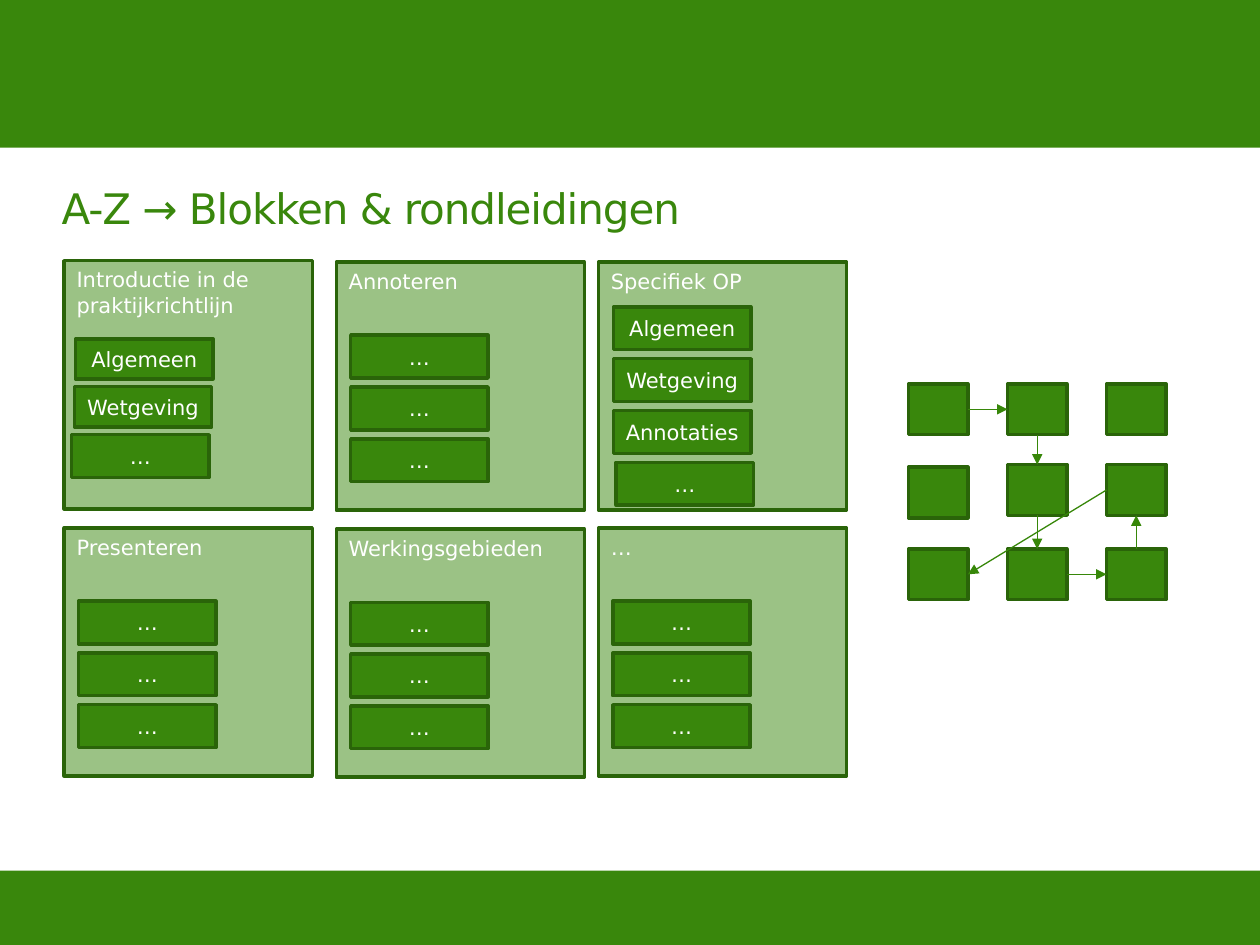
import pptx
import pptx.dml.color
import pptx.enum.shapes
import pptx.enum.text
import pptx.oxml
import pptx.oxml.ns
import pptx.util
from lxml import etree

Pt = pptx.util.Pt
RGBColor = pptx.dml.color.RGBColor
RECTANGLE = pptx.enum.shapes.MSO_SHAPE.RECTANGLE
STRAIGHT = pptx.enum.shapes.MSO_CONNECTOR.STRAIGHT
ANCHOR = pptx.enum.text.MSO_ANCHOR
ALIGN = pptx.enum.text.PP_ALIGN
qn = pptx.oxml.ns.qn

GREEN = RGBColor(0x39, 0x87, 0x0C)
DARK_GREEN = RGBColor(0x2A, 0x64, 0x09)
ARROW_GREEN = RGBColor(0x37, 0x87, 0x09)
WHITE = RGBColor(0xFF, 0xFF, 0xFF)

FONT = "DejaVu Sans"
SLIDE_WIDTH, SLIDE_HEIGHT = 720, 540
PANEL_SIZE = 141.8
CHIP_WIDTH = 78.5
TOP, RIGHT, BOTTOM, LEFT = 0, 3, 2, 1

PANEL_FRAME = {"margin_left": Pt(7.2), "margin_right": Pt(7.2),
               "margin_top": Pt(3.6), "margin_bottom": Pt(3.6),
               "vertical_anchor": ANCHOR.TOP, "word_wrap": True}
CHIP_FRAME = {**PANEL_FRAME, "margin_left": Pt(3), "margin_right": Pt(3),
              "vertical_anchor": ANCHOR.MIDDLE}
TITLE_FRAME = {**PANEL_FRAME, "margin_top": Pt(5)}
LABEL_FONT = {"size": Pt(12), "name": FONT}
TITLE_FONT = {"size": Pt(24), "name": FONT}

DOTS = ["…"] * 3
STANDARD = {"labels": DOTS, "first": 41.8, "step": 29.6,
            "insets": [8.2] * 3, "heights": [24.5] * 3}
PANELS = [
    {**STANDARD, "at": (36.7, 149), "heading": "Introductie in de praktijkrichtlijn",
     "labels": ["Algemeen", "Wetgeving", "…"], "first": 44.6, "step": 27.4,
     "insets": [6.5, 5.8, 4.3], "heights": [23, 23, 24.5]},
    {**STANDARD, "at": (192.2, 149.8), "heading": "Annoteren"},
    {**STANDARD, "at": (36.7, 301.7), "heading": "Presenteren"},
    {**STANDARD, "at": (192.2, 302.4), "heading": "Werkingsgebieden"},
    {**STANDARD, "at": (342, 301.7), "heading": "…"},
    {**STANDARD, "at": (342, 149.8), "heading": "Specifiek OP",
     "labels": ["Algemeen", "Wetgeving", "Annotaties", "…"], "first": 25.6,
     "insets": [8.6, 8.6, 8.6, 10.1], "heights": [24.5] * 4},
]

TOUR = [
    ((0, 0), RIGHT, (0, 1), LEFT),
    ((0, 1), BOTTOM, (1, 1), TOP),
    ((1, 1), BOTTOM, (2, 1), TOP),
    ((2, 1), RIGHT, (2, 2), LEFT),
    ((2, 2), TOP, (1, 2), BOTTOM),
    ((1, 2), LEFT, (2, 0), RIGHT),
]


def apply_format(target, values):
    for key, value in values.items():
        setattr(target, key, value)


def add_block(slide, box, outlined=True):
    block = slide.shapes.add_shape(RECTANGLE, *map(Pt, box))
    block.shadow.inherit = False
    block.fill.solid()
    block.fill.fore_color.rgb = GREEN
    if outlined:
        block.line.color.rgb = DARK_GREEN
        block.line.width = Pt(2)
    else:
        block.line.fill.background()
    return block


def write(block, text, frame_format, font_format, color, align):
    frame = block.text_frame
    apply_format(frame, frame_format)
    paragraph = frame.paragraphs[0]
    paragraph.alignment = align
    run = paragraph.add_run()
    run.text = text
    apply_format(run.font, font_format)
    run.font.color.rgb = color
    return run


def add_bands(slide, box):
    left, top, width, height = box
    footer_top = 497.5
    add_block(slide, (left, top + footer_top, width, height - footer_top), outlined=False)
    add_block(slide, (left, top, width, 84.4), outlined=False)


def add_title(slide, box):
    title = slide.shapes.add_textbox(*map(Pt, box))
    run = write(title, "A-Z → Blokken & rondleidingen", TITLE_FRAME, TITLE_FONT,
                GREEN, ALIGN.LEFT)
    run.font._element.set("spc", "-60")


def add_panel(slide, box, panel):
    left, top = box[:2]
    background = add_block(slide, box)
    fill_color = background._element.spPr.find(qn("a:solidFill")).find(qn("a:srgbClr"))
    etree.SubElement(fill_color, qn("a:alpha")).set("val", "50000")
    write(background, panel["heading"], PANEL_FRAME, LABEL_FONT, WHITE, ALIGN.LEFT)
    chips = zip(panel["labels"], panel["insets"], panel["heights"])
    for index, (label, inset, height) in enumerate(chips):
        chip_top = top + panel["first"] + index * panel["step"]
        chip = add_block(slide, (left + inset, chip_top, CHIP_WIDTH, height))
        write(chip, label, CHIP_FRAME, LABEL_FONT, WHITE, ALIGN.CENTER)


def add_tour(slide, box):
    left, top, width, height = box
    stop_width, stop_height = 34, 29
    column_step = (width - stop_width) / 2
    row_offsets = (0, 46.1, height - stop_height)
    stops = {}
    for row, offset in enumerate(row_offsets):
        for column in range(3):
            nudge = 1.4 if (row, column) == (1, 0) else 0
            stops[row, column] = add_block(
                slide, (left + column * column_step, top + offset + nudge,
                        stop_width, stop_height))
    for start, start_side, end, end_side in TOUR:
        arrow = slide.shapes.add_connector(STRAIGHT, 0, 0, 0, 0)
        arrow.begin_connect(stops[start], start_side)
        arrow.end_connect(stops[end], end_side)
        arrow.line.color.rgb = ARROW_GREEN
        arrow.line.width = Pt(0.75)
        etree.SubElement(arrow.line._get_or_add_ln(), qn("a:tailEnd")).set("type", "triangle")
        etree.SubElement(arrow._element.spPr, qn("a:effectLst"))


def main():
    presentation = pptx.Presentation()
    presentation.slide_width = Pt(SLIDE_WIDTH)
    presentation.slide_height = Pt(SLIDE_HEIGHT)
    slide = presentation.slides.add_slide(presentation.slide_layouts[6])
    add_bands(slide, (0, 0, SLIDE_WIDTH, SLIDE_HEIGHT))
    add_title(slide, (28.1, 99.4, 564.5, 45.4))
    for panel in PANELS:
        add_panel(slide, (*panel["at"], PANEL_SIZE, PANEL_SIZE), panel)
    add_tour(slide, (519.1, 219.4, 147.2, 123.3))
    presentation.save("out.pptx")


if __name__ == "__main__":
    main()
